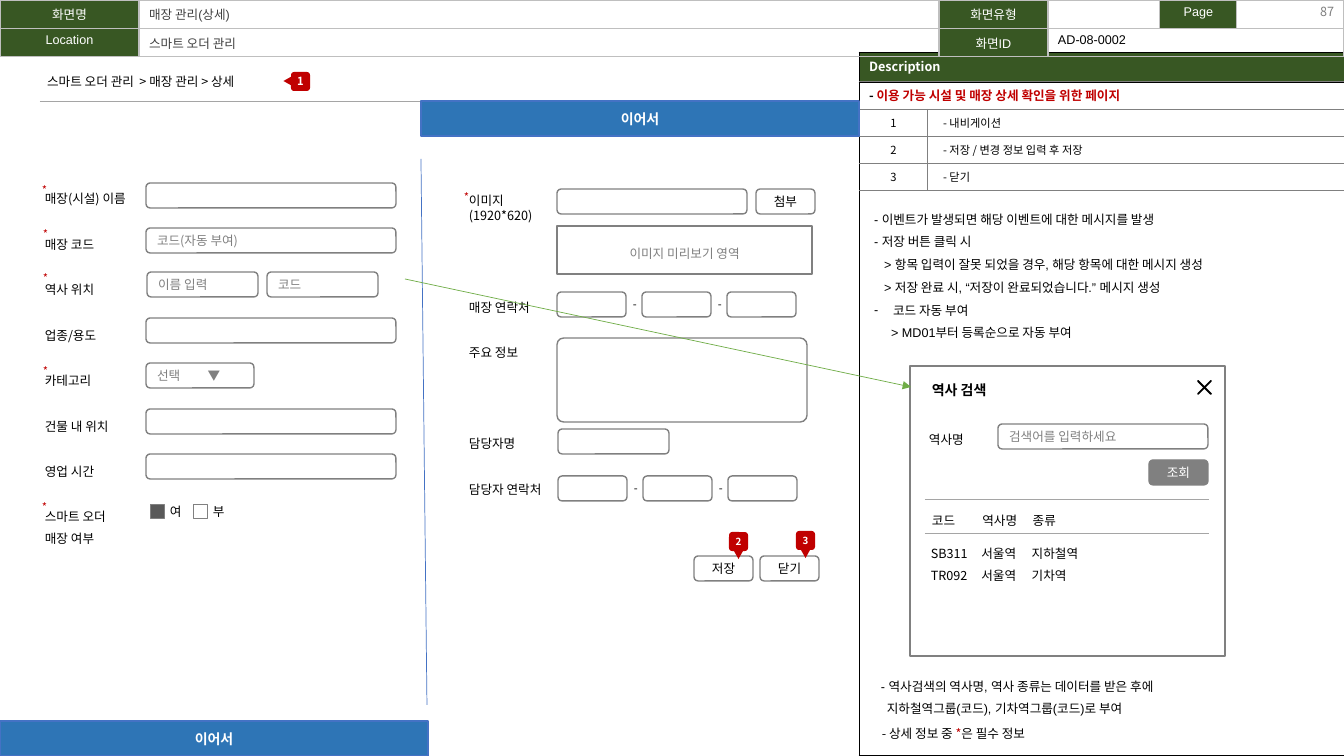
"""Build the store detail screen specification slide."""
from lxml import etree
from pptx import Presentation
from pptx import util as u
from pptx.dml import color
from pptx.enum import shapes, text
from pptx.oxml import ns

PX = 914400 / 100.8
CJK = "Noto Sans CJK KR"
COLOURS = {"green": "385723", "white": "FFFFFF", "black": "000000", "grey": "808080",
           "dark": "404040", "red": "C00000", "pale": "BFBFBF", "rule": "A5A5A5",
           "blue": "2E75B6", "edge": "4472C4", "arrow": "70AD47", "check": "595959"}
LEFT, CENTER, RIGHT = text.PP_ALIGN.LEFT, text.PP_ALIGN.CENTER, text.PP_ALIGN.RIGHT
TOP, MIDDLE = text.MSO_ANCHOR.TOP, text.MSO_ANCHOR.MIDDLE
KIND = shapes.MSO_SHAPE

BREADCRUMB = "스마트 오더 관리  > 매장 관리 > 상세"
HEADER = [["화면명", "매장 관리(상세)", "화면유형", "", "Page", ""],
          ["Location", "스마트 오더 관리", "화면ID", "AD-08-0002", "", ""]]
DESCRIPTION = [["Description"], [""]]
SUMMARY = [("- ", "black"), ("이용 가능 시설 및 매장 상세 확인을 위한 페이지", "red")]
ACTIONS = [[SUMMARY, ""], ["1", "- 내비게이션"],
           ["2", "- 저장 / 변경 정보 입력 후 저장"], ["3", "- 닫기"]]
RULES = ["- 이벤트가 발생되면 해당 이벤트에 대한 메시지를 발생", "- 저장 버튼 클릭 시",
         "> 항목 입력이 잘못 되었을 경우, 해당 항목에 대한 메시지 생성",
         "> 저장 완료 시, “저장이 완료되었습니다.” 메시지 생성",
         "코드 자동 부여", "> MD01부터 등록순으로 자동 부여"]
RULE_INDENTS = [0, 0, 10, 10, 19, 17]
NOTES = ["- 역사검색의 역사명, 역사 종류는 데이터를 받은 후에",
         "지하철역그룹(코드), 기차역그룹(코드)로 부여"]
REQUIRED_NOTE = [("- 상세 정보 중 ", "black"), ("*", "red"), ("은 필수 정보", "black")]
LEFT_LABELS = ["매장(시설) 이름", "매장 코드", "역사 위치", "업종/용도", "카테고리",
               "건물 내 위치", "영업 시간"]
RIGHT_LABELS = [("매장 연락처", 307), ("주요 정보", 352), ("담당자명", 443),
                ("담당자 연락처", 489)]
STARS = [(32, 178), (33, 222), (33, 266), (33, 359), (32, 495), (454, 185)]
FIELDS = [(146, 183, 250, ""), (146, 228, 250, "코드(자동 부여)"), (147, 272, 111, "이름 입력"),
          (267, 272, 111, "코드"), (146, 318, 250, ""), (146, 363, 108, "선택\t▼"),
          (146, 409, 250, ""), (146, 454, 250, ""), (557, 189, 190, ""),
          (558, 429, 111, ""), (998, 424, 210, "검색어를 입력하세요")]
PHONES = [(557, 292), (558, 476)]
BUTTONS = [(756, 189, "첨부"), (694, 556, "저장"), (760, 556, "닫기")]
CHECKS = [(150, "여", "check"), (193, "부", "white")]
BANNERS = [(0, 721, 428), (421, 101, 438)]
BADGES = [("1", 291, 72, 283, 77, 270), ("2", 729, 532, 734, 551, 180),
          ("3", 796, 531, 801, 550, 180)]
STATION_HEAD = "코드\t역사명\t종류"
STATIONS = ["SB311\t서울역\t지하철역", "TR092\t서울역\t기차역"]


def px(*lengths):
    return [u.Emu(round(length * PX)) for length in lengths]


def rgb(name):
    return color.RGBColor.from_string(COLOURS[name])


def add_node(parent, tag, **attributes):
    return etree.SubElement(parent, ns.qn("a:" + tag), **attributes)


def write(frame, lines, size=9, colour="black", bold=False, align=LEFT, anchor=TOP,
          font=CJK, spacing=1, indents=(), tabs=()):
    frame.word_wrap = True
    frame.vertical_anchor = anchor
    lines = [lines] if isinstance(lines, str) else lines
    for index, line in enumerate(lines):
        para = frame.paragraphs[0] if index == 0 else frame.add_paragraph()
        para.alignment, para.line_spacing, para.space_before = align, spacing, u.Pt(0)
        props = para._p.get_or_add_pPr()
        margin = px(indents[index])[0] if indents else 0
        bulleted = line == "코드 자동 부여"
        props.set("marL", str(margin))
        props.set("indent", str(-margin if bulleted else 0))
        if bulleted:
            add_node(props, "buChar", char="-")
        else:
            add_node(props, "buNone")
        if tabs:
            stops = add_node(props, "tabLst")
            for stop in px(*tabs):
                add_node(stops, "tab", pos=str(stop), algn="l")
        for words, tint in ([(line, colour)] if isinstance(line, str) else line):
            if not words:
                add_node(para._p, "endParaRPr", sz=str(size * 100))
                continue
            span = para.add_run()
            span.text = words
            span.font.size, span.font.bold, span.font.name = u.Pt(size), bold, font
            span.font.color.rgb = rgb(tint)
            add_node(span._r.get_or_add_rPr(), "ea", typeface=CJK)


def label(page, lines, x, y, w, h=25, **style):
    box = page.shapes.add_textbox(*px(x, y, w, h))
    write(box.text_frame, lines, **style)


def shape(page, kind, x, y, w, h, fill="white", line="grey", width=1, words="", **style):
    item = page.shapes.add_shape(kind, *px(x, y, w, h))
    item.shadow.inherit = False
    item.fill.solid()
    item.fill.fore_color.rgb = rgb(fill)
    if line:
        item.line.color.rgb = rgb(line)
        item.line.width = u.Pt(width)
    else:
        item.line.fill.background()
    if words:
        write(item.text_frame, words, anchor=MIDDLE, **style)
    return item


def connect(page, x1, y1, x2, y2, colour="rule", arrow=False):
    link = page.shapes.add_connector(shapes.MSO_CONNECTOR.STRAIGHT, *px(x1, y1, x2, y2))
    link.line.color.rgb = rgb(colour)
    link.line.width = u.Pt(0.5)
    if arrow:
        add_node(link._element.spPr.find(ns.qn("a:ln")), "tailEnd", type="triangle")
    add_node(link._element.spPr, "effectLst")


def grid(page, rows, x, y, widths, heights, line, width, style_of, sides_of):
    frame = page.shapes.add_table(len(rows), len(widths),
                                  *px(x, y, sum(widths), sum(heights)))
    table = frame.table
    table.first_row = table.horz_banding = False
    for column, size in zip(table.columns, px(*widths)):
        column.width = size
    for row, size in zip(table.rows, px(*heights)):
        row.height = size
    for r, row in enumerate(rows):
        for c, words in enumerate(row):
            cell = table.cell(r, c)
            style = dict(style_of(r, c))
            fill = style.pop("fill", None)
            anchor = style.pop("anchor", TOP)
            write(cell.text_frame, [words], **style)
            cell.vertical_anchor = anchor
            props = cell._tc.get_or_add_tcPr()
            for side in "LRTB":
                edge = add_node(props, "ln" + side, w=str(u.Pt(width)))
                if side in sides_of(r, c):
                    add_node(add_node(edge, "solidFill"), "srgbClr", val=COLOURS[line])
                else:
                    add_node(edge, "noFill")
            if fill:
                cell.fill.solid()
                cell.fill.fore_color.rgb = rgb(fill)
            else:
                cell.fill.background()
    return table


def header_style(r, c):
    if c in (0, 2) or (r, c) == (0, 4):
        return {"fill": "green", "colour": "white", "align": CENTER, "font": "Arial"}
    return {"colour": "dark" if c == 1 else "black", "font": "Arial"}


def action_style(r, c):
    if r == 0:
        return {"size": 9, "bold": True, "anchor": MIDDLE}
    return {"size": 8, "align": LEFT if c else CENTER, "anchor": MIDDLE,
            "indents": [5 if c else 0]}


def add_tables(page):
    grid(page, DESCRIPTION, 859, 52, [485], [30, 673], "black", 0.5,
         lambda r, c: {"colour": "white", "bold": True, "fill": None if r else "green"},
         lambda r, c: "LRTB")
    actions = grid(page, ACTIONS, 859, 81, [69, 416], [27] * 4, "grey", 0.75, action_style,
                   lambda r, c: "LTB" if r and c else "RTB" if r else "TB")
    actions.cell(0, 0).merge(actions.cell(0, 1))
    header = grid(page, HEADER, 0, 0, [139, 800, 109, 112, 77, 107], [28, 28], "pale", 1,
                  header_style, lambda r, c: "LRTB")
    header.cell(1, 3).merge(header.cell(1, 5))
    label(page, "87", 1042, -8, 302, 40, colour="grey", align=RIGHT, anchor=MIDDLE)


def add_form(page):
    for index, words in enumerate(LEFT_LABELS):
        label(page, words, 35, 186 + 45.5 * index, 125)
    label(page, ["스마트 오더", "매장 여부"], 35, 496, 120, 55, spacing=1.5)
    label(page, ["이미지", "(1920*620)"], 459, 188, 113, 40)
    for words, middle in RIGHT_LABELS:
        label(page, words, 459, middle - 12, 113)
    for x, y, w, words in FIELDS:
        shape(page, KIND.ROUNDED_RECTANGLE, x, y, w, 25, words=words, colour="grey",
              tabs=[58] if "\t" in words else ())
    for x, y in STARS:
        label(page, "*", x, y, 21, 24, size=8, colour="red", align=CENTER)
    shape(page, KIND.RECTANGLE, 557, 226, 255, 48, words="이미지 미리보기 영역",
          colour="grey", align=CENTER, spacing=1.5)
    main_info = shape(page, KIND.ROUNDED_RECTANGLE, 557, 338, 250, 84)
    main_info.adjustments[0] = 0.08
    for x, y in PHONES:
        for part in range(3):
            shape(page, KIND.ROUNDED_RECTANGLE, x + 85 * part, y, 69, 25)
        for gap in range(2):
            label(page, "-", x + 66 + 85 * gap, y, 21, 24, size=8, align=CENTER)
    for x, y, words in BUTTONS:
        shape(page, KIND.ROUNDED_RECTANGLE, x, y, 59, 25, words=words, align=CENTER)
    for x, words, fill in CHECKS:
        shape(page, KIND.RECTANGLE, x, 504, 14, 14, fill=fill, width=0.5)
        label(page, words, x + 10, 499, 55)
    for words, x, y, tip_x, tip_y, turn in BADGES:
        tip = shape(page, KIND.ISOSCELES_TRIANGLE, tip_x, tip_y, 9, 8, "red", None)
        tip.rotation = turn
        badge = shape(page, KIND.ROUNDED_RECTANGLE, x, y, 19, 19, "red", None, words=words,
                      size=8 if words == "1" else 7, colour="white", bold=True, align=CENTER)
        frame = badge.text_frame
        frame.margin_left = frame.margin_right = frame.margin_top = frame.margin_bottom = 0
    connect(page, 40, 101, 775, 101)
    connect(page, 421, 159, 427, 705, "edge")
    for x, y, w in BANNERS:
        shape(page, KIND.RECTANGLE, x, y, w, 35, "blue", "edge", words="이어서", size=10,
              colour="white", bold=True, align=CENTER)


def add_station_popup(page):
    label(page, "역사 검색", 922, 377, 209, 27, size=10, bold=True)
    close = shape(page, KIND.MATH_MULTIPLY, 1192, 375, 25, 25, "black", "black")
    close.adjustments[0] = 0.02
    label(page, "역사명", 919, 419, 84, 30, spacing=1.5)
    shape(page, KIND.ROUNDED_RECTANGLE, 1149, 460, 59, 25, "grey", words="조회",
          colour="white", align=CENTER)
    for y in (499, 533):
        connect(page, 925, y, 1209, y)
    label(page, STATION_HEAD, 922, 500, 283, 30, spacing=1.5, tabs=[59, 167])
    label(page, STATIONS, 921, 533, 283, 53, spacing=1.5, tabs=[63, 168])
    connect(page, 405, 279, 911, 387, "arrow", True)


def main():
    deck = Presentation()
    deck.slide_width, deck.slide_height = px(1344, 756)
    page = deck.slides.add_slide(deck.slide_layouts[1])
    title, rules = page.shapes.title, page.placeholders[1]
    for holder, place in ((title, (37, 69, 261, 25)), (rules, (864, 199, 465, 144))):
        holder.left, holder.top, holder.width, holder.height = px(*place)
        holder.text_frame.auto_size = text.MSO_AUTO_SIZE.NONE
    write(title.text_frame, BREADCRUMB)
    write(rules.text_frame, RULES, font="Arial", spacing=1.5, indents=RULE_INDENTS)
    add_tables(page)
    shape(page, KIND.RECTANGLE, 910, 366, 315, 290)
    add_form(page)
    add_station_popup(page)
    label(page, NOTES, 871, 666, 347, 53, font="Arial", spacing=1.5, indents=[0, 6])
    label(page, [REQUIRED_NOTE], 872, 721, 353)
    deck.save("out.pptx")


if __name__ == "__main__":
    main()
